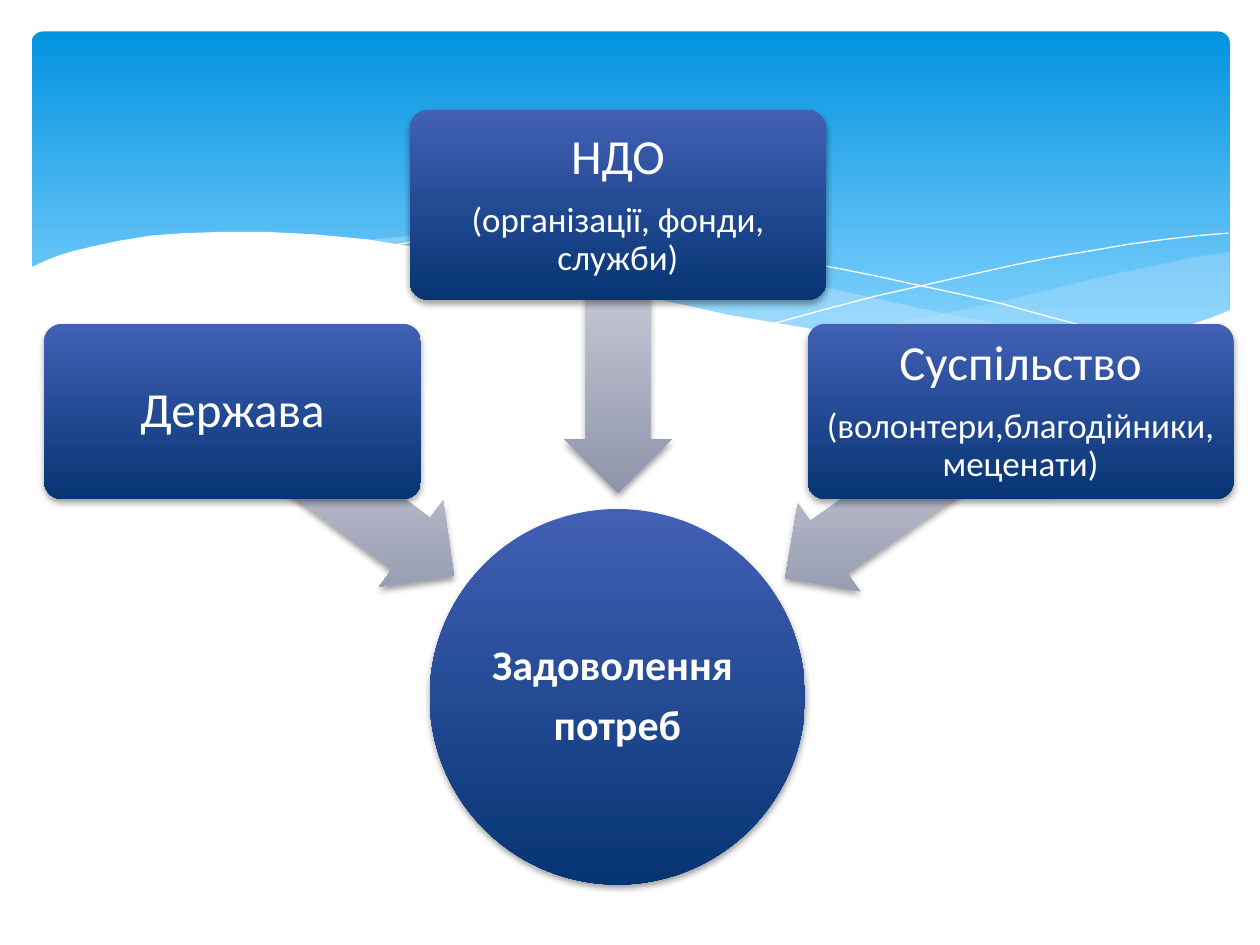
from dataclasses import dataclass
from lxml.etree import SubElement
from pptx import Presentation
from pptx.dml.color import RGBColor as RGB
from pptx.enum.shapes import MSO_SHAPE as Shape
from pptx.enum.text import MSO_ANCHOR as Anchor, PP_ALIGN as Align
from pptx.oxml.ns import qn
from pptx.util import Inches, Pt


@dataclass(frozen=True)
class Theme:
    font: str = "Calibri"
    head: int = 28
    goal: int = 24
    note: int = 20
    white: str = "FFFFFF"
    mist: str = "C6E7FC"
    shade: str = "000000"
    sky: tuple = ("0293E0", "83D3FE")
    navy: tuple = ("4260B5", "063573")
    steel: tuple = ("DADCE6", "8F94AA")


theme = Theme()
prs = Presentation()
prs.slide_width, prs.slide_height = Inches(10), Inches(7.5)
slide = prs.slides.add_slide(prs.slide_layouts[6])
shapes = slide.shapes


def add_block(kind, box, hues, adj=(), end=1.0, shadow=True):
    """Add a borderless preset shape with a top-to-bottom gradient."""
    block = shapes.add_shape(kind, *map(Inches, box))
    for i, value in enumerate(adj):
        block.adjustments[i] = value
    block.line.fill.background()
    block.fill.gradient()
    block.fill.gradient_angle = 270
    for stop, hue, pos in zip(block.fill.gradient_stops, hues, (0, end)):
        stop.color.rgb, stop.position = RGB.from_string(hue), pos
    props = block._element.spPr
    props.find(qn("a:gradFill")).set("rotWithShape", "0")
    block.shadow.inherit = False
    if shadow:
        outer = SubElement(props.find(qn("a:effectLst")), qn("a:outerShdw"),
                           blurRad=str(Pt(4)), dist=str(Pt(2)),
                           dir="5400000", rotWithShape="0")
        color = SubElement(outer, qn("a:srgbClr"), val=theme.shade)
        SubElement(color, qn("a:alpha"), val="38000")
    return block


def add_text(block, lines, inset):
    """Write centred (text, size, bold) lines into a block."""
    frame = block.text_frame
    frame.word_wrap = True
    frame.vertical_anchor = Anchor.MIDDLE
    frame.margin_left = frame.margin_right = Inches(inset)
    frame.margin_top = frame.margin_bottom = Inches(inset)
    for i, (text, size, bold) in enumerate(lines):
        para = frame.add_paragraph() if i else frame.paragraphs[0]
        para.text = text
        para.alignment = Align.CENTER
        para.line_spacing = 0.9
        para.space_after = Pt(size * 0.35)
        font = para.font
        font.name, font.size, font.bold = theme.font, Pt(size), bold
        font.color.rgb = RGB.from_string(theme.white)


# Sky banner
add_block(Shape.ROUNDED_RECTANGLE, (0.25, 0.25, 9.51, 2.7), theme.sky,
          [0.034], end=0.9, shadow=False)

# Waves: points, fill colour (None for a thin line), opacity in percent
right = [
    (9.76, 2), (9.48, 2.04), (9.21, 2.1), (8.91, 2.16), (8.61, 2.23),
    (8.05, 2.37), (7.53, 2.48), (7.06, 2.57), (6.61, 2.65), (6.91, 2.69),
    (7.19, 2.72), (7.45, 2.75), (7.69, 2.77), (8.03, 2.78), (8.35, 2.77),
    (8.63, 2.75), (8.89, 2.72), (9.13, 2.67), (9.35, 2.62), (9.49, 2.57),
    (9.63, 2.52), (9.76, 2.47)]
middle = [
    (8.93, 2.73), (8.66, 2.69), (8.07, 2.6), (7.41, 2.47), (6.68, 2.31),
    (6.29, 2.22), (5.98, 2.14), (5.69, 2.08), (5.41, 2.03), (5.14, 1.98),
    (4.89, 1.94), (4.42, 1.89), (3.99, 1.86), (3.61, 1.85), (3.28, 1.87),
    (2.86, 1.91), (3.23, 1.96), (3.62, 2.03), (4.04, 2.11), (4.49, 2.22),
    (4.91, 2.32), (5.3, 2.4), (5.66, 2.48), (6.01, 2.55), (6.34, 2.61),
    (6.65, 2.66), (6.95, 2.7), (7.22, 2.74), (7.48, 2.76), (7.85, 2.78),
    (8.28, 2.78), (8.57, 2.77)]
falling = [
    (3.09, 1.95), (3.28, 1.92), (3.53, 1.89), (3.87, 1.87), (4.16, 1.87),
    (4.5, 1.88), (4.89, 1.9), (5.33, 1.94), (5.82, 2), (6.36, 2.08),
    (6.65, 2.13), (6.95, 2.19), (7.27, 2.26), (7.6, 2.33), (7.95, 2.41),
    (8.31, 2.51), (8.69, 2.61), (9.07, 2.72)]
rising = [
    (6.13, 2.57), (6.53, 2.46), (6.95, 2.35), (7.48, 2.23), (8.06, 2.1),
    (8.36, 2.04), (8.66, 1.99), (8.95, 1.94), (9.24, 1.9), (9.51, 1.87),
    (9.75, 1.85)]
front = [
    (9.77, 2.46), (9.59, 2.53), (9.4, 2.59), (9.2, 2.65), (8.99, 2.69),
    (8.75, 2.73), (8.5, 2.75), (8.09, 2.77), (7.78, 2.76), (7.44, 2.74),
    (7.08, 2.7), (6.68, 2.65), (6.26, 2.58), (5.79, 2.5), (5.29, 2.39),
    (4.75, 2.27), (4.18, 2.13), (3.91, 2.07), (3.65, 2.02), (3.4, 1.97),
    (3.16, 1.94), (2.92, 1.9), (2.5, 1.86), (2.11, 1.84), (1.77, 1.84),
    (1.46, 1.85), (1.19, 1.87), (0.95, 1.91), (0.76, 1.95), (0.59, 1.99),
    (0.46, 2.03), (0.36, 2.07), (0.23, 2.13), (0.23, 3.29), (9.77, 3.29)]
waves = [(right, theme.mist, 29), (middle, theme.mist, 40),
         (falling, None, 100), (rising, None, 100),
         (front, theme.white, 100)]
for points, hue, alpha in waves:
    dots = [(Inches(x), Inches(y)) for x, y in points]
    pen = shapes.build_freeform(*dots[0])
    pen.add_line_segments(dots[1:], close=hue is not None)
    wave = pen.convert_to_shape()
    wave.shadow.inherit = False
    if hue is None:
        wave.fill.background()
        wave.line.color.rgb = RGB.from_string(theme.white)
        wave.line.width = Pt(0)
        continue
    wave.line.fill.background()
    wave.fill.solid()
    wave.fill.fore_color.rgb = RGB.from_string(hue)
    if alpha < 100:
        color = wave._element.spPr.find(qn("a:solidFill"))[0]
        SubElement(color, qn("a:alpha"), val=str(alpha * 1000))

# Goal
goal = add_block(Shape.OVAL, (3.41, 4.04, 2.98, 2.98), theme.navy)
add_text(goal, [("Задоволення ", theme.goal, True),
                ("потреб", theme.goal, True)], 0.02)

# Sources: arrow box, turn, card box, heading, note
sources = [
    ((1.63, 3.49, 2.19, 0.85), 216.7, (0.35, 2.57, 2.99, 1.39),
     "Держава", None),
    ((3.76, 2.34, 2.29, 0.85), 270, (3.25, 0.87, 3.31, 1.51),
     "НДО", "(організації, фонди, служби)"),
    ((6.02, 3.5, 2.3, 0.85), 324.7, (6.41, 2.57, 3.38, 1.39),
     "Суспільство", "(волонтери,благодійники,меценати)"),
]
for path, turn, box, head, note in sources:
    arrow = add_block(Shape.LEFT_ARROW, path, theme.steel, (0.6, 0.5))
    arrow.rotation = turn
    card = add_block(Shape.ROUNDED_RECTANGLE, box, theme.navy, [0.1])
    lines = [(head, theme.head, False)]
    if note:
        lines.append((note, theme.note, False))
    add_text(card, lines, 0.06)

prs.save("out.pptx")
